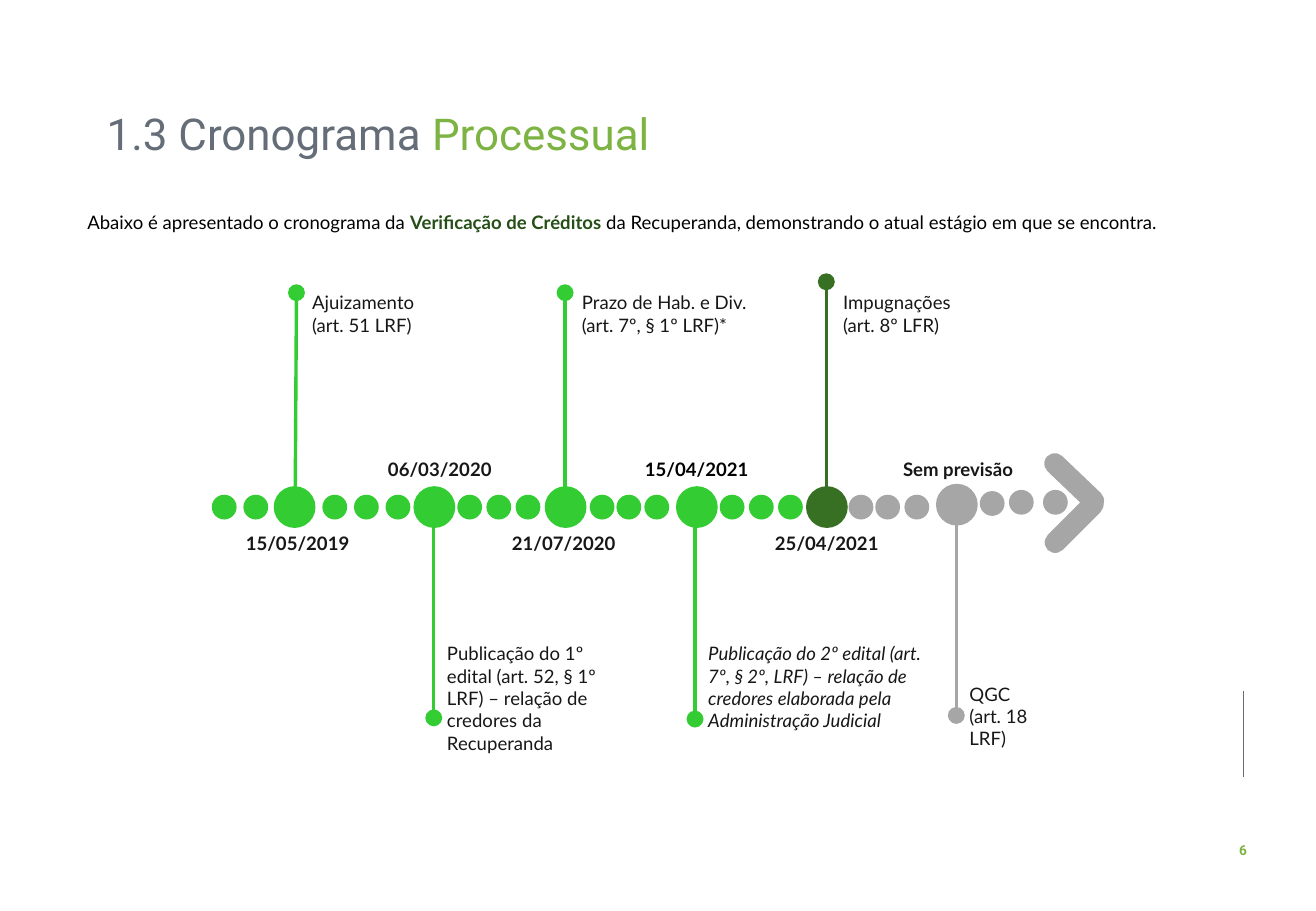
from dataclasses import dataclass
from typing import NamedTuple

from lxml import etree
from pptx import Presentation
from pptx.dml.color import RGBColor
from pptx.enum.shapes import MSO_CONNECTOR, MSO_SHAPE
from pptx.enum.text import MSO_ANCHOR, PP_ALIGN
from pptx.oxml.ns import qn
from pptx.shapes.base import BaseShape
from pptx.slide import Slide
from pptx.util import Emu, Pt

OVAL, BAR = MSO_SHAPE.OVAL, MSO_SHAPE.ROUNDED_RECTANGLE
LINE = MSO_CONNECTOR.STRAIGHT
LEFT, MID, FULL = PP_ALIGN.LEFT, PP_ALIGN.CENTER, PP_ALIGN.JUSTIFY
TOP, CORE = MSO_ANCHOR.TOP, MSO_ANCHOR.MIDDLE
SCALE = 9144  # EMU per px, 100 px to the inch


@dataclass(frozen=True)
class Theme:
    green: str = "33CC33"
    dark: str = "377023"
    gray: str = "A6A6A6"
    slate: str = "656D78"
    lime: str = "7CB342"
    moss: str = "264F17"
    ink: str = "181717"
    black: str = "000000"
    head: str = "Roboto"
    body: str = "Lato"
    big: float = 26
    base: float = 11
    tiny: float = 8.1


THEME = Theme()


class Box(NamedTuple):
    x: int
    y: int
    w: int
    h: int


class Run(NamedTuple):
    text: str
    tone: str = THEME.ink
    bold: bool = False
    slant: bool = False
    face: str = THEME.body
    size: float = THEME.base


class Label(NamedTuple):
    box: Box
    paras: list[list[Run]]
    align: PP_ALIGN = LEFT
    anchor: MSO_ANCHOR = TOP
    form: dict = {}


class Stem(NamedTuple):
    start: tuple[int, int]
    end: tuple[int, int]
    tone: str
    width: float = 2
    knob: bool = True


class Row(NamedTuple):
    tone: str
    size: int
    top: int
    lefts: list[int]


def px(value: int) -> Emu:
    return Emu(value * SCALE)


def rgb(tone: str) -> RGBColor:
    return RGBColor.from_string(tone)


def draw_label(slide: Slide, label: Label) -> None:
    frame = slide.shapes.add_textbox(*map(px, label.box)).text_frame
    frame.word_wrap = True
    frame.vertical_anchor = label.anchor
    for i, runs in enumerate(label.paras):
        para = frame.add_paragraph() if i else frame.paragraphs[0]
        para.alignment = label.align
        for key, value in label.form.items():
            setattr(para, key, value)
        for item in runs:
            run = para.add_run()
            run.text = item.text
            form = {"name": item.face, "size": Pt(item.size),
                    "bold": item.bold, "italic": item.slant}
            for key, value in form.items():
                setattr(run.font, key, value)
            run.font.color.rgb = rgb(item.tone)


def draw_stem(slide: Slide, stem: Stem) -> None:
    line = slide.shapes.add_connector(LINE, *map(px, stem.start + stem.end))
    line.line.color.rgb = rgb(stem.tone)
    line.line.width = Pt(stem.width)
    props = line._element.spPr
    if stem.knob:
        etree.SubElement(props.find(qn("a:ln")), qn("a:tailEnd"),
                         type="oval", w="lg", len="lg")
    etree.SubElement(props, qn("a:effectLst"))


def draw_shape(slide: Slide, kind: MSO_SHAPE, box: Box, tone: str) -> BaseShape:
    shape = slide.shapes.add_shape(kind, *map(px, box))
    shape.shadow.inherit = False
    shape.fill.solid()
    shape.fill.fore_color.rgb = shape.line.color.rgb = rgb(tone)
    shape.line.width = Pt(1)
    return shape


def note(box: Box, *lines: str, slant: bool = False) -> Label:
    return Label(box, [[Run(line, slant=slant)] for line in lines])


def date(x: int, y: int, w: int, text: str, tone: str = THEME.ink) -> Label:
    return Label(Box(x, y, w, 29), [[Run(text, tone, True)]], MID)


# Title, intro and page number
HEAD = {"face": THEME.head, "size": THEME.big}
FRAME = [
    Label(Box(78, 86, 818, 53),
          [[Run("1.3 Cronograma ", THEME.slate, **HEAD),
            Run("Processual", THEME.lime, **HEAD)]],
          anchor=CORE, form={"line_spacing": 0.9}),
    Label(Box(62, 166, 986, 30),
          [[Run("Abaixo é apresentado o cronograma da ", THEME.black),
            Run("Verificação de Créditos ", THEME.moss, True),
            Run("da Recuperanda, demonstrando o atual estágio em que se "
                "encontra.", THEME.black)]],
          FULL, form={"line_spacing": 1.14}),
    Label(Box(1006, 688, 34, 24),
          [[Run("6", THEME.lime, True, face=THEME.head, size=THEME.tiny)]], MID),
]

# Event notes and dates
ABOVE, BELOW = 372, 433
NOTES = [
    note(Box(247, 235, 112, 47), "Ajuizamento (art. 51 LRF)"),
    note(Box(469, 235, 162, 47), "Prazo de Hab. e Div. (art. 7º, § 1º LRF)*"),
    note(Box(684, 235, 126, 47), "Impugnações (art. 8º LFR)"),
    note(Box(358, 524, 168, 84), "Publicação do 1º edital (art. 52, § 1º LRF) "
         "– relação de credores da Recuperanda"),
    note(Box(573, 524, 199, 84), "Publicação do 2º edital (art. 7º, § 2º, LRF) "
         "– relação de credores elaborada pela Administração Judicial",
         slant=True),
    note(Box(788, 557, 93, 47), "QGC", "(art. 18 LRF)"),
    date(157, BELOW, 176, "15/05/2019"),
    date(286, ABOVE, 152, "06/03/2020"),
    date(409, BELOW, 110, "21/07/2020"),
    date(515, ABOVE, 117, "15/04/2021", THEME.black),
    date(619, BELOW, 123, "25/04/2021"),
    date(730, ABOVE, 117, "Sem previsão"),
]

# Stems run from the axis to their knobs; the last is the side rule
STEMS = [
    Stem((243, 401), (244, 241), THEME.green),
    Stem((465, 401), (465, 241), THEME.green),
    Stem((357, 432), (357, 591), THEME.green),
    Stem((572, 432), (572, 592), THEME.green),
    Stem((680, 424), (680, 232), THEME.dark),
    Stem((787, 429), (787, 589), THEME.gray),
    Stem((1023, 569), (1023, 640), THEME.slate, 0.5, False),
]

# Dots along the axis
ROWS = [
    Row(THEME.green, 19, 408, [175, 201, 266, 292, 318, 377, 401, 425, 486,
                               508, 531, 593, 617, 641]),
    Row(THEME.gray, 19, 408, [699, 721, 745]),
    Row(THEME.gray, 19, 405, [807]),
    Row(THEME.gray, 19, 404, [831, 859]),
    Row(THEME.green, 33, 401, [226, 341, 449, 557]),
    Row(THEME.dark, 33, 401, [664]),
    Row(THEME.gray, 33, 399, [771]),
]
ARMS = [(389, 43.7), (423, 315)]


def main() -> None:
    deck = Presentation()
    deck.slide_width, deck.slide_height = px(1083), px(750)
    slide = deck.slides.add_slide(deck.slide_layouts[6])
    for stem in STEMS:
        draw_stem(slide, stem)
    for row in ROWS:
        for left in row.lefts:
            draw_shape(slide, OVAL, Box(left, row.top, row.size, row.size), row.tone)
    for top, turn in ARMS:
        arm = draw_shape(slide, BAR, Box(854, top, 60, 16), THEME.gray)
        arm.adjustments[0] = 0.5
        arm.rotation = turn
    for label in FRAME + NOTES:
        draw_label(slide, label)
    deck.save("out.pptx")


if __name__ == "__main__":
    main()
